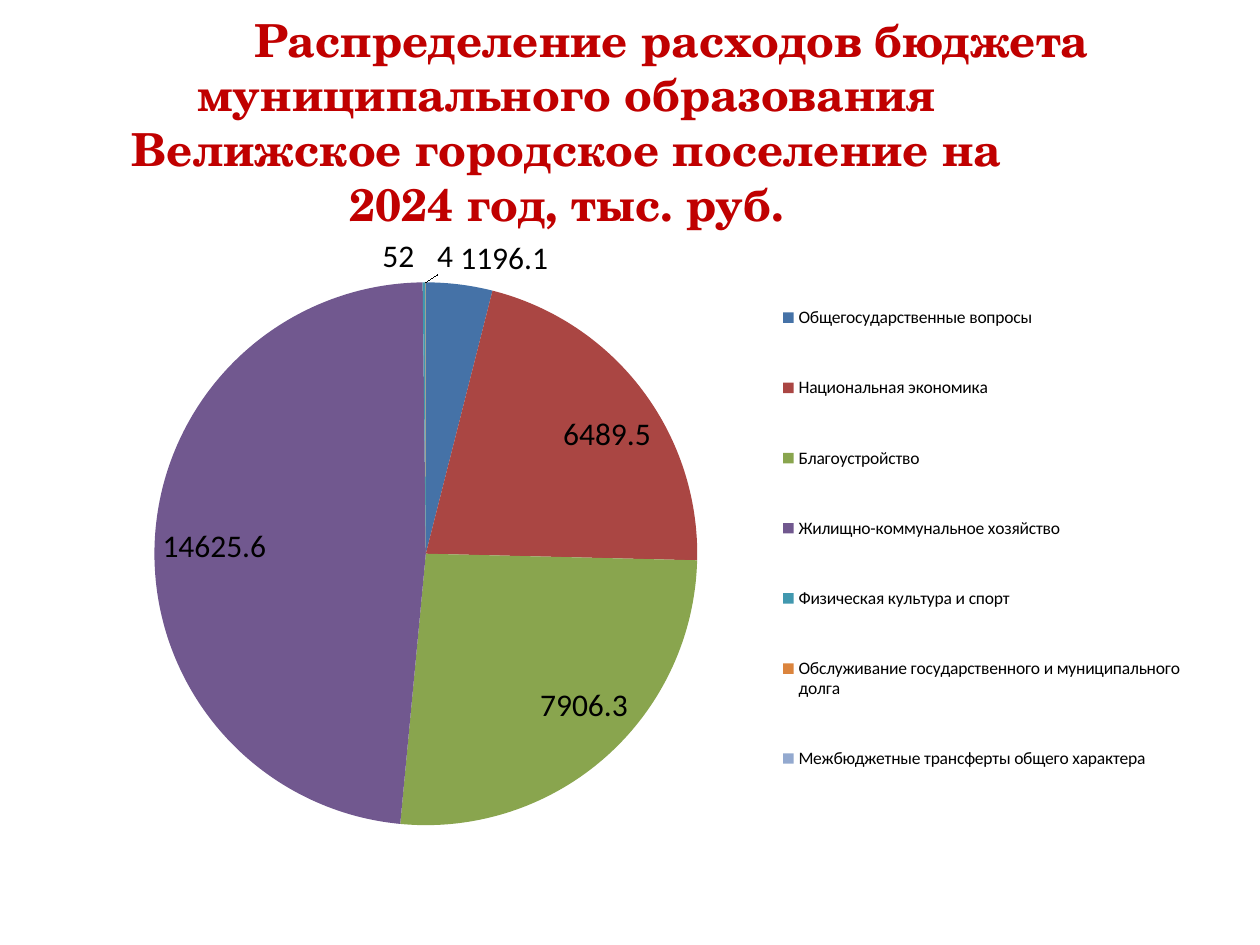
"""Build a slide with a pie chart of the 2024 budget expenditure of an urban settlement."""
from lxml.etree import SubElement
from pptx import Presentation
from pptx.chart.data import CategoryChartData
from pptx.dml.color import RGBColor
from pptx.enum.chart import XL_CHART_TYPE as ChartType
from pptx.enum.chart import XL_LABEL_POSITION as LabelPosition
from pptx.enum.chart import XL_LEGEND_POSITION as LegendPosition
from pptx.enum.text import MSO_ANCHOR as Anchor
from pptx.enum.text import PP_ALIGN as Align
from pptx.oxml.ns import qn
from pptx.util import Emu, Pt

BLACK = RGBColor(0x00, 0x00, 0x00)
DARK_RED = RGBColor(0xC0, 0x00, 0x00)
BLUE = RGBColor(0x45, 0x72, 0xA7)
RED = RGBColor(0xAA, 0x46, 0x43)
GREEN = RGBColor(0x89, 0xA5, 0x4E)
PURPLE = RGBColor(0x71, 0x58, 0x8F)
TEAL = RGBColor(0x41, 0x98, 0xAF)
ORANGE = RGBColor(0xDB, 0x84, 0x3D)
PALE_BLUE = RGBColor(0x93, 0xA9, 0xCF)


def px(length):
    return Emu(round(length * 914400 / 126))


def place(parent, index, inner, **fractions):
    for old in parent.findall(qn("c:layout")):
        parent.remove(old)
    layout = SubElement(parent, qn("c:layout"))
    parent.insert(index, layout)
    manual = SubElement(layout, qn("c:manualLayout"))
    if inner:
        SubElement(manual, qn("c:layoutTarget")).set("val", "inner")
    for axis in "xy":
        SubElement(manual, qn(f"c:{axis}Mode")).set("val", "edge")
    for side, fraction in fractions.items():
        SubElement(manual, qn(f"c:{side}")).set("val", str(fraction))


TITLE_LINES = [
    ("Распределение расходов бюджета", 0),
    ("муниципального образования", 210),
    ("Велижское городское поселение на 2024 год, тыс. руб.", 0),
]
EXPENSES = [
    ("Общегосударственные вопросы", 1196.1, BLUE),
    ("Национальная экономика", 6489.5, RED),
    ("Благоустройство", 7906.3, GREEN),
    ("Жилищно-коммунальное хозяйство", 14625.6, PURPLE),
    ("Физическая культура и спорт", 52, TEAL),
    ("Обслуживание государственного и муниципального долга", 4, ORANGE),
    ("Межбюджетные трансферты общего характера", 0, PALE_BLUE),
]

deck = Presentation()
deck.slide_width, deck.slide_height = px(1260), px(945)
slide = deck.slides.add_slide(deck.slide_layouts[6])

title = slide.shapes.add_textbox(px(105), px(42), px(1134), px(158)).text_frame
title.word_wrap = True
title.vertical_anchor = Anchor.MIDDLE
for number, (words, right_margin) in enumerate(TITLE_LINES):
    line = title.add_paragraph() if number else title.paragraphs[0]
    line.alignment = Align.CENTER
    if right_margin:
        line._p.get_or_add_pPr().set("marR", str(px(right_margin)))
    run = line.add_run()
    run.text = words
    run.font.name = "TeX Gyre Schola"
    run.font.size = Pt(26)
    run.font.bold = True
    run.font.color.rgb = DARK_RED

budget = CategoryChartData()
budget.categories = [name for name, amount, color in EXPENSES]
budget.add_series("Series 1", [amount for name, amount, color in EXPENSES])
pie = slide.shapes.add_chart(
    ChartType.PIE, px(63), px(220), px(1134), px(624), budget
).chart
pie.has_title = False
pie.font.name = "Calibri"
pie.font.size = Pt(18)
pie.font.color.rgb = BLACK

plot = pie.plots[0]
plot.vary_by_categories = True
for slice_number, (name, amount, color) in enumerate(EXPENSES):
    fill = plot.series[0].points[slice_number].format.fill
    fill.solid()
    fill.fore_color.rgb = color

plot.has_data_labels = True
amounts = plot.data_labels
amounts.show_value = True
amounts.show_percentage = False
amounts.number_format = "General;;"
amounts.number_format_is_linked = False
amounts.position = LabelPosition.BEST_FIT
amounts.font.size = Pt(18)
amounts.font.color.rgb = BLACK

pie.has_legend = True
legend = pie.legend
legend.position = LegendPosition.RIGHT
legend.include_in_layout = False
legend.font.name = "Calibri"
legend.font.size = Pt(10)
legend.font.color.rgb = BLACK

place(plot._element.getparent(), 0, True, x=0.08, y=0.1, w=0.48, h=0.87)
place(legend._element, 1, False, x=0.63, y=0.06, w=0.36, h=0.9)

deck.save("out.pptx")
